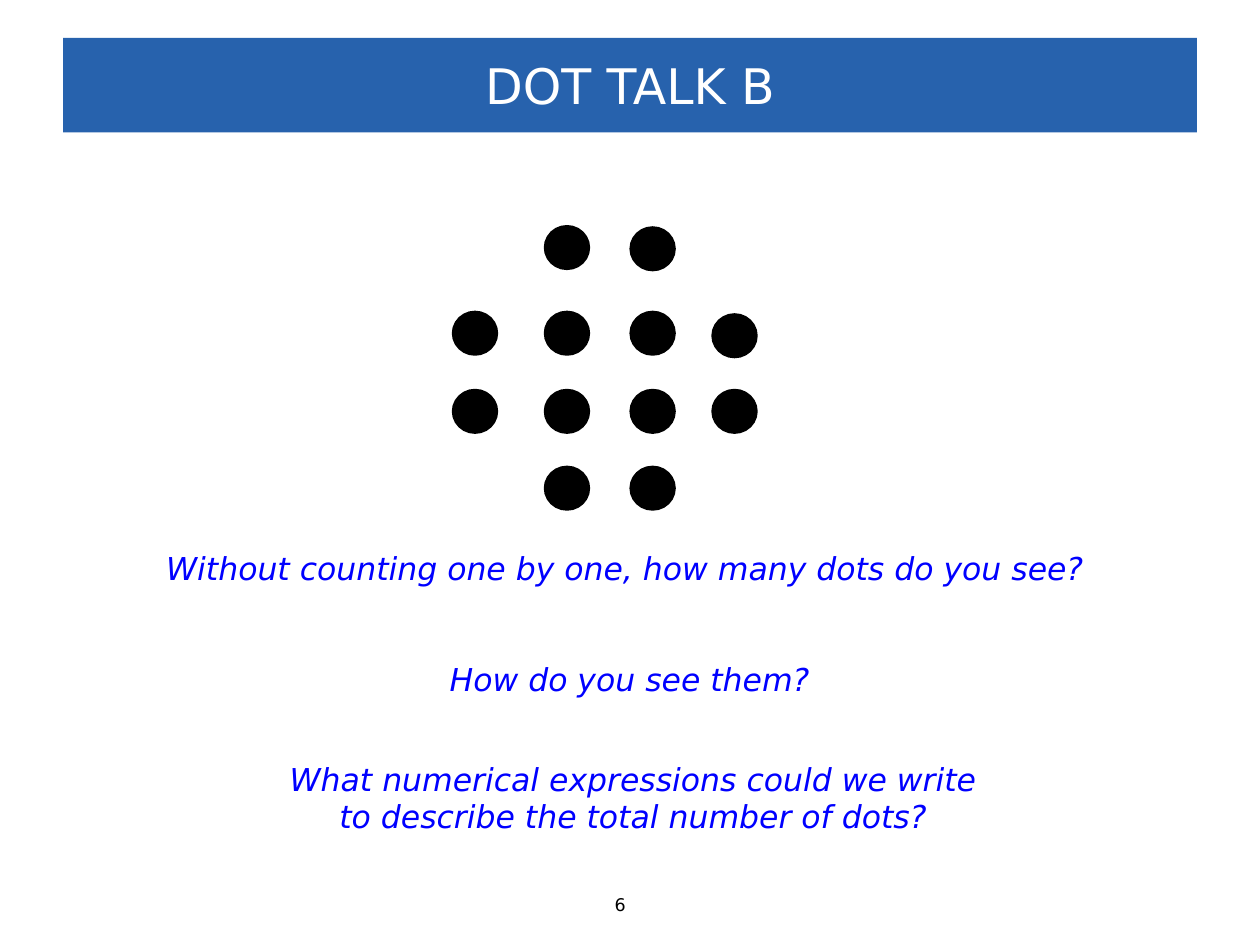
from pptx import Presentation
from pptx.dml.color import RGBColor
from pptx.enum.shapes import MSO_SHAPE
from pptx.enum.text import MSO_ANCHOR, MSO_AUTO_SIZE, PP_ALIGN
from pptx.util import Inches, Pt

FONT = "DejaVu Sans"
BANNER_BLUE = RGBColor(0x27, 0x62, 0xAD)
QUESTION_BLUE = RGBColor(0x00, 0x00, 0xFF)
BLACK = RGBColor(0x00, 0x00, 0x00)
WHITE = RGBColor(0xFF, 0xFF, 0xFF)

# Content
TITLE = "DOT TALK B"
PAGE_NUMBER = "6"

# Text, (left, top, width, height), wraps
QUESTIONS = [
    ("Without counting one by one, how many dots do you see?",
     (1.22, 4.31, 7.61, 0.4), False),
    ("How do you see them?", (3.47, 5.19, 3.11, 0.4), False),
    ("What numerical expressions could we write to describe the total "
     "number of dots?", (2.08, 5.98, 5.89, 0.71), True),
]

# Dot rows: top, pattern over the four columns
COLUMN_LEFTS = [3.6, 4.33, 5.01, 5.66]
DOT_ROWS = [
    (1.8, ".oo."),
    (2.48, "oooo"),
    (3.1, "oooo"),
    (3.71, ".oo."),
]
# Dots that sit slightly below their row: (row, column) -> offset
DOT_OFFSETS = {(0, 2): 0.01, (1, 3): 0.02}
DOT_WIDTH, DOT_HEIGHT = 0.34, 0.33


def add_text(paragraph, text, size, color, italic=False):
    run = paragraph.add_run()
    run.text = text
    run.font.name = FONT
    run.font.size = Pt(size)
    run.font.color.rgb = color
    run.font.italic = italic


def add_text_box(slide, text, box, size, color, wraps=False, italic=False):
    shape = slide.shapes.add_textbox(*map(Inches, box))
    frame = shape.text_frame
    frame.word_wrap = wraps
    frame.auto_size = MSO_AUTO_SIZE.SHAPE_TO_FIT_TEXT
    paragraph = frame.paragraphs[0]
    paragraph.alignment = PP_ALIGN.CENTER if wraps else PP_ALIGN.LEFT
    add_text(paragraph, text, size, color, italic)


def add_title(slide):
    title = slide.shapes.title
    title.left, title.top = Inches(0.5), Inches(0.3)
    title.width, title.height = Inches(9), Inches(0.75)
    title.fill.solid()
    title.fill.fore_color.rgb = BANNER_BLUE
    frame = title.text_frame
    frame.vertical_anchor = MSO_ANCHOR.MIDDLE
    frame.auto_size = MSO_AUTO_SIZE.NONE
    paragraph = frame.paragraphs[0]
    paragraph.alignment = PP_ALIGN.CENTER
    add_text(paragraph, TITLE, 28, WHITE)


def add_dots(slide):
    group = slide.shapes.add_group_shape()
    for row, (top, pattern) in enumerate(DOT_ROWS):
        for column, (left, mark) in enumerate(zip(COLUMN_LEFTS, pattern)):
            if mark != "o":
                continue
            dot_top = top + DOT_OFFSETS.get((row, column), 0)
            dot = group.shapes.add_shape(
                MSO_SHAPE.OVAL, Inches(left), Inches(dot_top),
                Inches(DOT_WIDTH), Inches(DOT_HEIGHT))
            dot.shadow.inherit = False
            dot.fill.solid()
            dot.fill.fore_color.rgb = BLACK
            dot.line.color.rgb = BLACK
            dot.line.width = Pt(2)


def main():
    presentation = Presentation()
    presentation.slide_width = Inches(10)
    presentation.slide_height = Inches(7.5)
    slide = presentation.slides.add_slide(presentation.slide_layouts[5])

    add_title(slide)
    for text, box, wraps in QUESTIONS:
        add_text_box(slide, text, box, 18, QUESTION_BLUE, wraps, italic=True)
    add_dots(slide)
    add_text_box(slide, PAGE_NUMBER, (4.78, 7.05, 0.44, 0.27), 10, BLACK)

    presentation.save("out.pptx")


if __name__ == "__main__":
    main()
